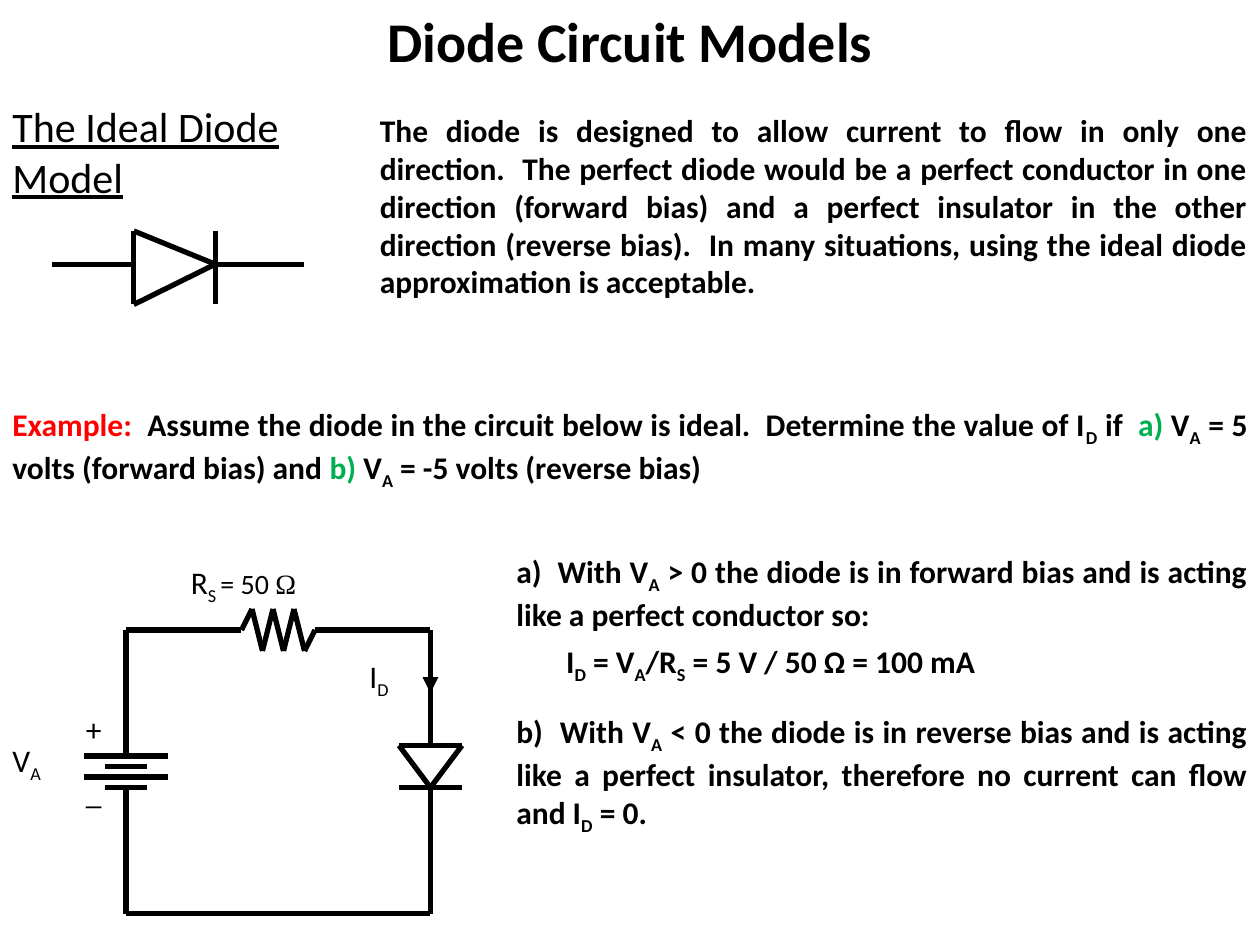
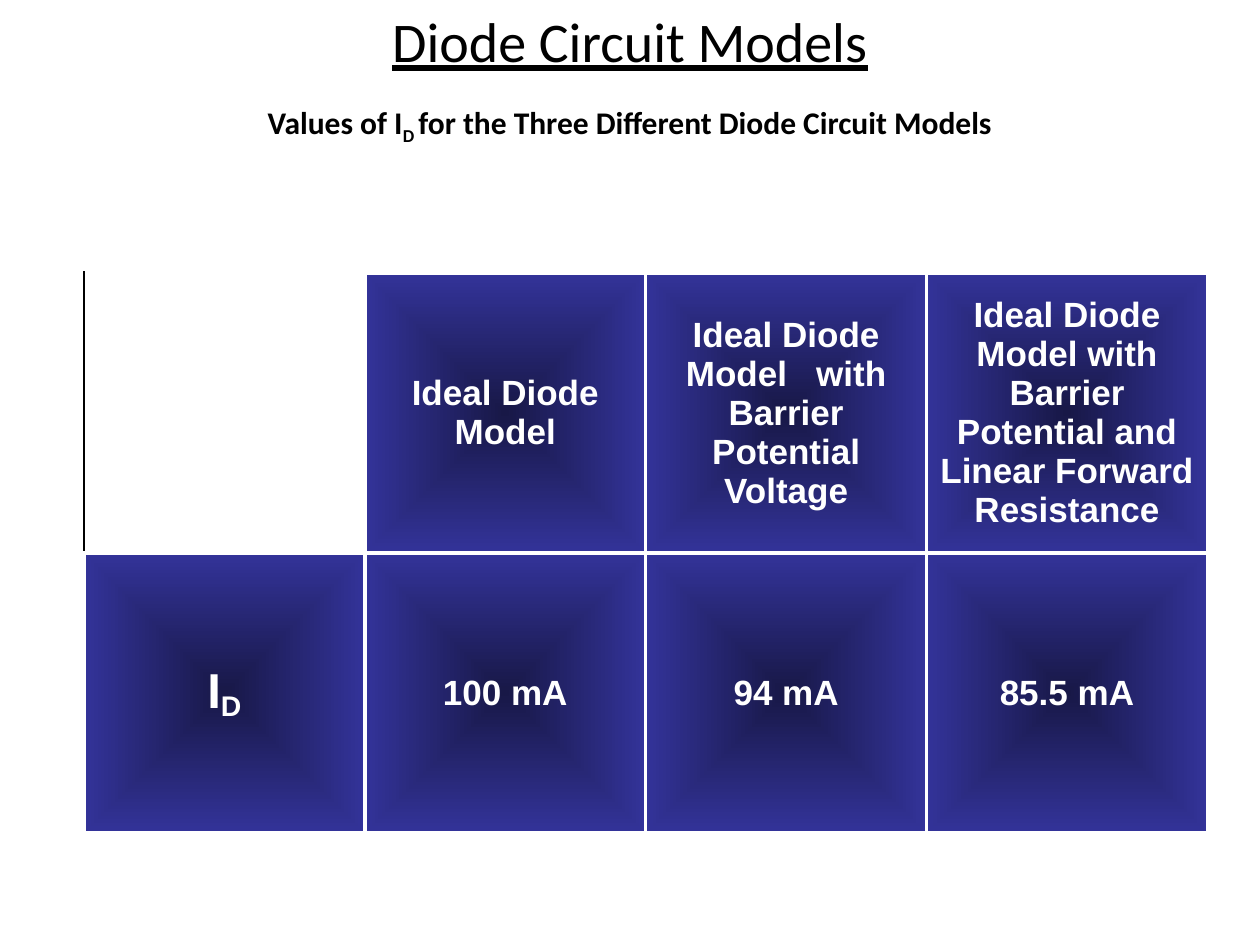
from itertools import pairwise

from lxml import etree
from pptx import Presentation
from pptx.dml.color import RGBColor
from pptx.enum.shapes import MSO_CONNECTOR
from pptx.enum.text import MSO_ANCHOR, MSO_AUTO_SIZE, PP_ALIGN
from pptx.oxml import parse_xml
from pptx.oxml.ns import nsdecls, qn
from pptx.util import Pt

STRAIGHT = MSO_CONNECTOR.STRAIGHT
LEFT, CENTER, JUSTIFY = PP_ALIGN.LEFT, PP_ALIGN.CENTER, PP_ALIGN.JUSTIFY
MIDDLE = MSO_ANCHOR.MIDDLE
GROW = MSO_AUTO_SIZE.SHAPE_TO_FIT_TEXT

COLORS = {
    "ink": "000000",
    "white": "FFFFFF",
    "example": "FF0000",
    "part": "00B050",
    "cell_center": "181847",
    "cell_edge": "333399",
}
BODY_FONT, TABLE_FONT, SYMBOL_FONT = "Calibri", "Arial", "Times New Roman"
LINE_WIDTH = 3
BLANK_LAYOUT = 6

# Text in [brackets] is a subscript.
TITLE = "Diode Circuit Models"
MODEL_HEADING = "The Ideal Diode Model"
MODEL_TEXT = (
    "The diode is designed to allow current to flow in only one direction.  "
    "The perfect diode would be a perfect conductor in one direction (forward bias) "
    "and a perfect insulator in the other direction (reverse bias).  "
    "In many situations, using the ideal diode approximation is acceptable."
)
EXAMPLE = [
    ("Example:  ", {"color": "example"}),
    ("Assume the diode in the circuit below is ideal.  "
     "Determine the value of I[D] if  ", {}),
    ("a)", {"color": "part"}),
    (" V[A] = 5 volts (forward bias) and ", {}),
    ("b)", {"color": "part"}),
    (" V[A] = -5 volts (reverse bias)", {}),
]
# Text, space before, left indent
ANSWERS = [
    ("a)  With V[A] > 0 the diode is in forward bias and is acting "
     "like a perfect conductor so:", 0, 0),
    ("I[D] = V[A]/R[S] = 5 V / 50 Ω = 100 mA", 5.4, 28.5),
    ("b)  With V[A] < 0 the diode is in reverse bias and is acting like a perfect "
     "insulator, therefore no current can flow and I[D] = 0.", 15.3, 0),
]
RESISTOR_LABEL = [
    ("R[S ]", {}),
    ("= 50 ", {"size": 16}),
    ("Ω", {"size": 16, "font": SYMBOL_FONT}),
]
# Content, left, top, width
CIRCUIT_LABELS = [
    ("+", 42, 402, 36),
    ("_", 42, 438, 36),
    ("V[A]", 0, 420, 48),
    ("I[D]", 204, 372, 48),
    (RESISTOR_LABEL, 102, 318, 108),
]

DIODE_SYMBOL = [
    [(30, 151), (76.5, 151)],
    [(76.5, 132), (76.5, 174), (123, 151), (76.5, 132)],
    [(123, 151), (174, 151)],
    [(123, 132), (123, 174)],
]
SOURCE_X, DIODE_X, TOP_Y, BOTTOM_Y = 72, 246, 360, 522
PLATES = [(432, 24), (438, 12), (444, 24), (450, 12)]  # y, half width
RESISTOR_START, RESISTOR_STEP, RESISTOR_SWING = 138, 6, 12
SWINGS = [0, -1, 1, -1, 1, -1, 1, 0]
DIODE_TOP, DIODE_TIP, DIODE_HALF = 426, 450, 18
ARROW_TIP = 396

TABLE_CAPTION = "Values of I[D ]for the Three Different Diode Circuit Models"
TABLE_ROWS = [
    ["", "Ideal Diode Model",
     "Ideal Diode Model   with Barrier Potential Voltage",
     "Ideal Diode Model with Barrier Potential and Linear Forward Resistance"],
    ["I[D]", "100 mA", "94 mA", "85.5 mA"],
]
TABLE_LEFT, TABLE_TOP, CELL_SIDE, CELL_HEIGHT = 48, 156, 160.5, 160
ROW_LABEL_SIZE, CELL_SIZE = 28, 20


def rgb(name):
    return RGBColor.from_string(COLORS[name])


def add_runs(paragraph, content, subscript=-25, **base):
    """Add a string, or (string, style) pieces, splitting off [subscripts]."""
    pieces = [(content, {})] if isinstance(content, str) else content
    for text, changes in pieces:
        style = {"size": 18, "font": BODY_FONT, "color": "ink",
                 "bold": False, "underline": False} | base | changes
        for index, part in enumerate(text.replace("]", "[").split("[")):
            if not part:
                continue
            run = paragraph.add_run()
            run.text = part
            font = run.font
            font.size, font.name = Pt(style["size"]), style["font"]
            font.bold, font.underline = style["bold"], style["underline"]
            font.color.rgb = rgb(style["color"])
            if index % 2:
                run._r.get_or_add_rPr().set("baseline", str(subscript * 1000))


def add_text(slide, box, paragraphs, align=LEFT, **style):
    """Add a text box of (content, space before, indent) paragraphs, or of one content."""
    shape = slide.shapes.add_textbox(*map(Pt, box))
    frame = shape.text_frame
    frame.word_wrap = True
    frame.auto_size = GROW
    if paragraphs is not ANSWERS:
        paragraphs = [(paragraphs, 0, 0)]
    for index, (content, space, indent) in enumerate(paragraphs):
        paragraph = frame.add_paragraph() if index else frame.paragraphs[0]
        paragraph.alignment = align
        paragraph.space_before = Pt(space)
        if indent:
            paragraph._p.get_or_add_pPr().set("marL", str(Pt(indent)))
        add_runs(paragraph, content, **style)


def add_path(shapes, points, arrow=False):
    """Join successive points with straight connectors."""
    for start, end in pairwise(points):
        connector = shapes.add_connector(STRAIGHT, *map(Pt, start + end))
        connector.line.color.rgb = rgb("ink")
        connector.line.width = Pt(LINE_WIDTH)
        if arrow:
            etree.SubElement(connector.line._get_or_add_ln(), qn("a:tailEnd"), type="triangle")
        etree.SubElement(connector._element.spPr, qn("a:effectLst"))


def add_circuit(shapes):
    left, right = SOURCE_X, DIODE_X
    resistor = [(RESISTOR_START + RESISTOR_STEP * index, TOP_Y + RESISTOR_SWING * swing)
                for index, swing in enumerate(SWINGS)]
    add_path(shapes, [(left, PLATES[0][0]), (left, TOP_Y), *resistor,
                      (right, TOP_Y), (right, DIODE_TOP)])
    add_path(shapes, [(right, DIODE_TIP), (right, BOTTOM_Y),
                      (left, BOTTOM_Y), (left, PLATES[-1][0])])
    for y, half in PLATES:
        add_path(shapes, [(left - half, y), (left + half, y)])
    anode = [(right - DIODE_HALF, DIODE_TOP), (right + DIODE_HALF, DIODE_TOP)]
    add_path(shapes, [*anode, (right, DIODE_TIP), anode[0]])
    add_path(shapes, [(x, DIODE_TIP) for x, _ in anode])
    add_path(shapes, [(right, TOP_Y), (right, ARROW_TIP)], arrow=True)


def add_border(cell, side, color, width):
    cell._tc.get_or_add_tcPr().append(parse_xml(
        f'<a:ln{side} {nsdecls("a")} w="{Pt(width)}"><a:solidFill>'
        f'<a:srgbClr val="{COLORS[color]}"/></a:solidFill></a:ln{side}>'))


def fill_from_center(cell):
    stops = "".join(
        f'<a:gs pos="{position}"><a:srgbClr val="{COLORS[color]}"/></a:gs>'
        for position, color in [(0, "cell_center"), (100000, "cell_edge")])
    cell._tc.get_or_add_tcPr().append(parse_xml(
        f'<a:gradFill {nsdecls("a")} rotWithShape="0"><a:gsLst>{stops}</a:gsLst>'
        '<a:path path="rect"><a:fillToRect l="50000" t="50000" r="50000" b="50000"/>'
        '</a:path></a:gradFill>'))


def add_values_table(slide):
    rows, columns = len(TABLE_ROWS), len(TABLE_ROWS[0])
    table = slide.shapes.add_table(
        rows, columns, Pt(TABLE_LEFT), Pt(TABLE_TOP),
        Pt(columns * CELL_SIDE), Pt(rows * CELL_HEIGHT)).table
    table.first_row = table.horz_banding = False
    for column in table.columns:
        column.width = Pt(CELL_SIDE)
    for row, texts in zip(table.rows, TABLE_ROWS):
        row.height = Pt(CELL_HEIGHT)
        for index, (cell, text) in enumerate(zip(row.cells, texts)):
            cell.vertical_anchor = MIDDLE
            cell.margin_left = cell.margin_right = Pt(3.6)
            cell.margin_top = cell.margin_bottom = Pt(3.6)
            for side in "LRTB":
                if side == "L" and not text:
                    add_border(cell, side, "ink", 1)
                else:
                    add_border(cell, side, "white", 2.25)
            if not text:
                cell.fill.background()
                continue
            fill_from_center(cell)
            size = CELL_SIZE if index else ROW_LABEL_SIZE
            paragraph = cell.text_frame.paragraphs[0]
            paragraph.alignment = CENTER
            paragraph.space_before = Pt(size * 0.2)
            add_runs(paragraph, text, subscript=-16, size=size,
                     font=TABLE_FONT, color="white", bold=True)


def add_titled_slide(presentation, **title_style):
    slide = presentation.slides.add_slide(presentation.slide_layouts[BLANK_LAYOUT])
    add_text(slide, (72, 0, 576, 45.5), TITLE, CENTER, size=32, **title_style)
    return slide


def build_ideal_model(presentation):
    slide = add_titled_slide(presentation, bold=True)
    add_text(slide, (0, 54, 204, 65.5), MODEL_HEADING, size=24, underline=True)
    add_text(slide, (210, 60, 510, 116.5), MODEL_TEXT, JUSTIFY, bold=True)
    symbol = slide.shapes.add_group_shape()
    for points in DIODE_SYMBOL:
        add_path(symbol.shapes, points)
    add_text(slide, (0, 228, 720, 51), EXAMPLE, JUSTIFY, bold=True)
    add_circuit(slide.shapes)
    for content, left, top, width in CIRCUIT_LABELS:
        add_text(slide, (left, top, width, 31), content)
    add_text(slide, (288, 312, 432, 163.5), ANSWERS, JUSTIFY, bold=True)


def build_comparison(presentation):
    slide = add_titled_slide(presentation, underline=True)
    add_text(slide, (72, 55.5, 576, 29), TABLE_CAPTION, CENTER, bold=True)
    add_values_table(slide)


def main():
    presentation = Presentation()
    presentation.slide_width, presentation.slide_height = Pt(720), Pt(540)
    build_ideal_model(presentation)
    build_comparison(presentation)
    presentation.save("out.pptx")


if __name__ == "__main__":
    main()
